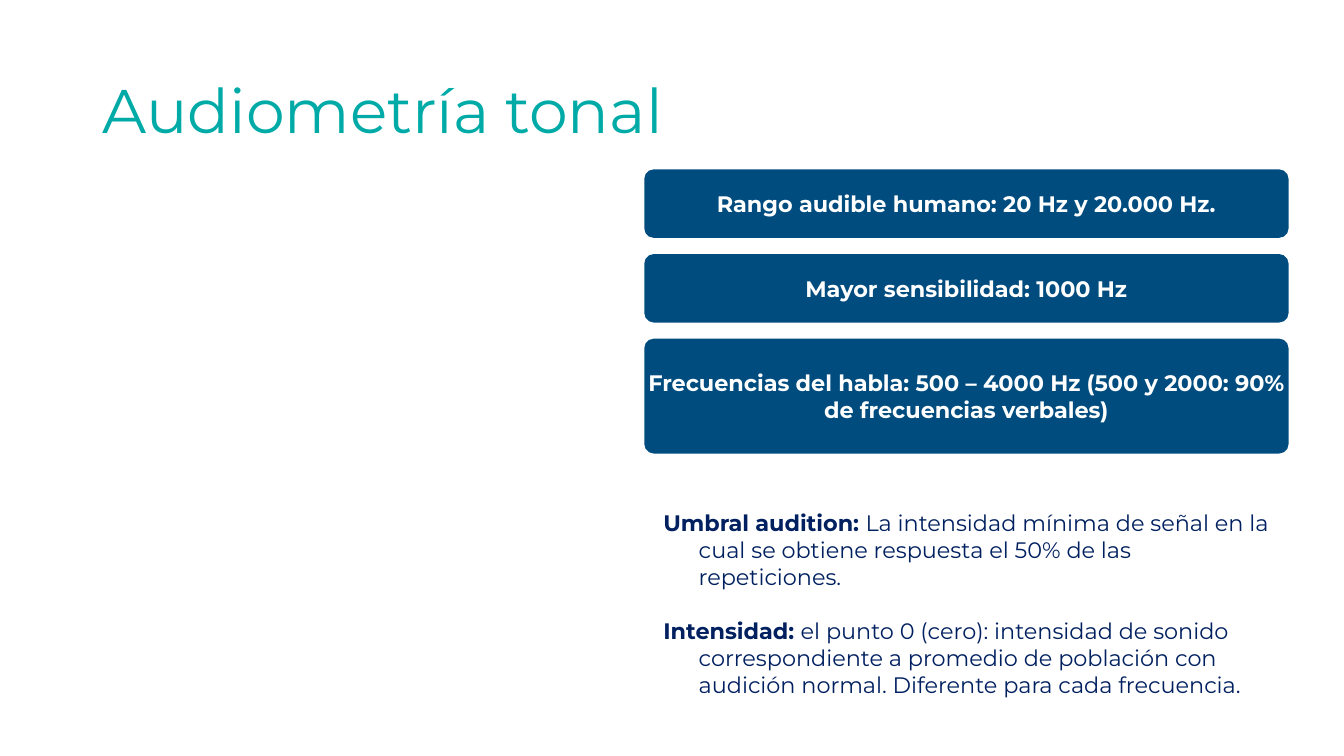
from dataclasses import dataclass

from pptx import Presentation
from pptx.dml.color import RGBColor as RGB
from pptx.enum.shapes import MSO_SHAPE as SHAPE
from pptx.enum.text import MSO_ANCHOR as ANCHOR, PP_ALIGN as ALIGN
from pptx.util import Inches, Pt


@dataclass(frozen=True)
class Theme:
    font: str = "Montserrat"
    teal: RGB = RGB(0x00, 0xAA, 0xA7)
    blue: RGB = RGB(0x00, 0x4C, 0x7F)
    navy: RGB = RGB(0x00, 0x20, 0x60)
    white: RGB = RGB(0xFF, 0xFF, 0xFF)
    title_size: int = 44
    body_size: int = 16


theme = Theme()


def style(r, size, color, bold=False):
    r.font.name = theme.font
    r.font.size = Pt(size)
    r.font.color.rgb = color
    r.font.bold = bold


def set_frame(tf, margin, anchor):
    """Turn wrapping on, with equal margins in inches on all sides."""
    tf.word_wrap = True
    tf.vertical_anchor = anchor
    tf.margin_left = tf.margin_right = Inches(margin)
    tf.margin_top = tf.margin_bottom = Inches(margin)


prs = Presentation()
prs.slide_width, prs.slide_height = Inches(13.33), Inches(7.5)
s = prs.slides.add_slide(prs.slide_layouts[6])

# Title
title = s.shapes.add_textbox(Inches(0.92), Inches(0.4), Inches(11.5), Inches(1.45))
tf = title.text_frame
set_frame(tf, 0.1, ANCHOR.MIDDLE)
tf.text = "Audiometría tonal"
p = tf.paragraphs[0]
p.line_spacing = 0.9
style(p.runs[0], theme.title_size, theme.teal)

# Stack of fact cards: equal gaps and the same corner radius
card_left, card_width = 6.39, 6.39
gap, radius = 0.16, 0.095
facts = [
    ("Rango audible humano: 20 Hz y 20.000 Hz.", 0.68),
    ("Mayor sensibilidad: 1000 Hz", 0.68),
    ("Frecuencias del habla: 500 – 4000 Hz (500 y 2000: 90% de frecuencias verbales)", 1.14),
]
top = 1.68
for fact, height in facts:
    sp = s.shapes.add_shape(SHAPE.ROUNDED_RECTANGLE, Inches(card_left), Inches(top),
                            Inches(card_width), Inches(height))
    sp.adjustments[0] = radius / height
    sp.shadow.inherit = False
    sp.fill.solid()
    sp.fill.fore_color.rgb = theme.blue
    sp.line.fill.background()
    tf = sp.text_frame
    set_frame(tf, 0, ANCHOR.MIDDLE)
    tf.text = fact
    p = tf.paragraphs[0]
    p.alignment = ALIGN.CENTER
    style(p.runs[0], theme.body_size, theme.white, bold=True)
    top += height + gap

# Definitions with a hanging indent
definitions = [
    ("Umbral audition: ",
     "La intensidad mínima de señal en la cual se obtiene respuesta el 50% de las repeticiones."),
    ("Intensidad: ",
     "el punto 0 (cero): intensidad de sonido correspondiente a promedio de población con "
     "audición normal. Diferente para cada frecuencia."),
]
box = s.shapes.add_textbox(Inches(6.52), Inches(4.95), Inches(6.15), Inches(2.35))
tf = box.text_frame
set_frame(tf, 0.06, ANCHOR.TOP)
tf.margin_top = Inches(0.1)
for i, (term, meaning) in enumerate(definitions):
    p = tf.add_paragraph() if i else tf.paragraphs[0]
    if i:
        p.space_before = Pt(19.5)
    pPr = p._p.get_or_add_pPr()
    pPr.set("marL", str(Inches(0.35)))
    pPr.set("indent", str(Inches(-0.35)))
    for text, bold in ((term, True), (meaning, False)):
        r = p.add_run()
        r.text = text
        style(r, theme.body_size, theme.navy, bold)

prs.save("out.pptx")
